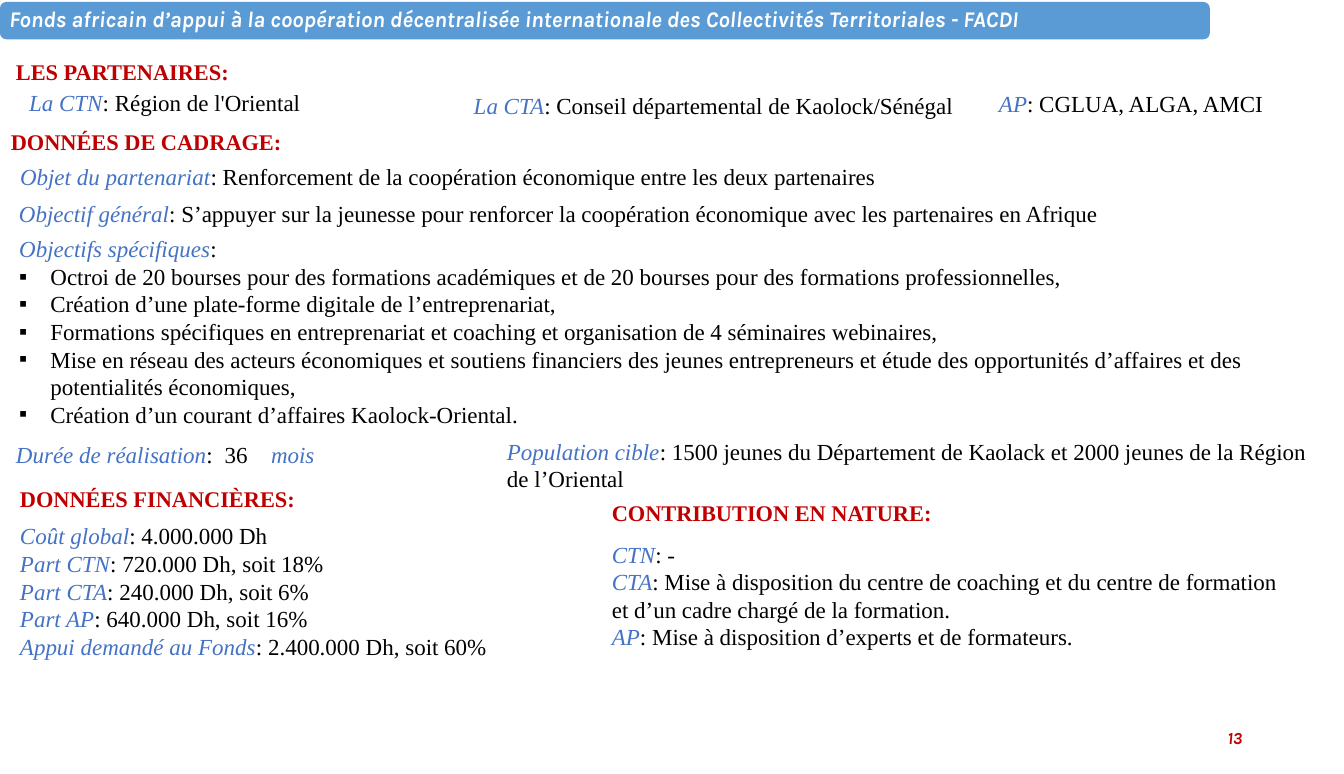
import pptx
import pptx.util
import pptx.dml.color
import pptx.enum.shapes
import pptx.enum.text
import pptx.oxml.ns
from lxml import etree

Inches = pptx.util.Inches
Pt = pptx.util.Pt
Align = pptx.enum.text.PP_ALIGN
Anchor = pptx.enum.text.MSO_ANCHOR
qn = pptx.oxml.ns.qn

HUES = {"band": "5B9BD5", "label": "4472C4", "head": "C00000",
        "text": "000000", "white": "FFFFFF"}
SERIF = "Times New Roman"
SANS = "Karla"
SIZE = 16.4


def hue(name):
    """Return the named colour."""
    return pptx.dml.color.RGBColor.from_string(HUES[name])


def place(shape, box):
    """Move a shape to a box of left, top, width and height in inches."""
    shape.left, shape.top, shape.width, shape.height = map(Inches, box)


def make_box(slide, box):
    """Add a wrapping text box and return its frame."""
    frame = slide.shapes.add_textbox(*map(Inches, box)).text_frame
    frame.word_wrap = True
    return frame


def style(para, name, size, color=None, bold=False, slant=False):
    """Set the font shared by the runs of a paragraph."""
    font = para.font
    font.name, font.size = name, Pt(size)
    font.bold, font.italic = bold, slant
    if color:
        font.color.rgb = hue(color)


def add_run(para, text, color, slant=False):
    """Add a run with its own colour and slant."""
    run = para.add_run()
    run.text = text
    run.font.color.rgb = hue(color)
    run.font.italic = slant


def add_pair(para, label, text):
    """Write a blue label followed by black text."""
    style(para, SERIF, SIZE)
    add_run(para, label, "label", True)
    add_run(para, ":" + text, "text")


def add_para(frame, index):
    """Return the first paragraph of a frame or add another."""
    return frame.paragraphs[0] if index == 0 else frame.add_paragraph()


def add_facts(slide, box, facts):
    """Fill a box with one labelled line per fact."""
    frame = make_box(slide, box)
    for index, (label, text) in enumerate(facts):
        add_pair(add_para(frame, index), label, " " + text)


def add_head(slide, box, text):
    """Add a red section heading."""
    para = make_box(slide, box).paragraphs[0]
    para.text = text
    style(para, SERIF, 16, "head", bold=True)


def set_mark(para, mark=None, inset=0):
    """Set the bullet and hanging indent of a paragraph."""
    props = para._p.get_or_add_pPr()
    props.set("marL", str(Inches(inset)))
    props.set("indent", str(-Inches(inset)))
    if mark:
        item = etree.Element(qn("a:buChar"), char=mark)
    else:
        item = etree.Element(qn("a:buNone"))
    font = props.find(qn("a:defRPr"))
    font.addprevious(item)


def add_banner(slide, box):
    """Draw the rounded band and set the title on it."""
    kind = pptx.enum.shapes.MSO_SHAPE.ROUNDED_RECTANGLE
    band = slide.shapes.add_shape(kind, *map(Inches, box))
    band.shadow.inherit = False
    band.fill.solid()
    band.fill.fore_color.rgb = hue("band")
    band.line.fill.background()
    title = slide.shapes.title
    title.element.addprevious(band.element)
    left, top, width, height = box
    place(title, (left + 0.02, top + 0.02, width - 0.03, height - 0.04))
    frame = title.text_frame
    frame.word_wrap = True
    frame.auto_size = pptx.enum.text.MSO_AUTO_SIZE.NONE
    frame.vertical_anchor = Anchor.MIDDLE
    frame.margin_left = frame.margin_right = Inches(0.07)
    frame.margin_top = frame.margin_bottom = Inches(0.07)
    para = frame.paragraphs[0]
    para.text = ("Fonds africain d’appui à la coopération décentralisée "
                 "internationale des Collectivités Territoriales - FACDI")
    para.alignment = Align.LEFT
    para.line_spacing = 0.9
    style(para, SANS, 16, "white", bold=True, slant=True)


def add_goals(slide, box):
    """Write the bulleted list of specific goals in the body."""
    body = slide.placeholders[1]
    place(body, box)
    frame = body.text_frame
    frame.auto_size = pptx.enum.text.MSO_AUTO_SIZE.NONE
    frame.vertical_anchor = Anchor.TOP
    goals = [
        "Octroi de 20 bourses pour des formations académiques et de "
        "20 bourses pour des formations professionnelles,",
        "Création d’une plate-forme digitale de l’entreprenariat,",
        "Formations spécifiques en entreprenariat et coaching et "
        "organisation de 4 séminaires webinaires,",
        "Mise en réseau des acteurs économiques et soutiens financiers des "
        "jeunes entrepreneurs et étude des opportunités d’affaires et des "
        "potentialités économiques,",
        "Création d’un courant d’affaires Kaolock-Oriental."]
    lead = frame.paragraphs[0]
    lead.space_before = Pt(0)
    add_pair(lead, "Objectifs spécifiques", "")
    set_mark(lead)
    for goal in goals:
        para = frame.add_paragraph()
        para.text = goal
        para.space_before = Pt(0)
        style(para, SERIF, SIZE, "text")
        set_mark(para, "▪", 0.31)


def add_term(slide, box):
    """Write the duration, spaced with tab stops."""
    para = make_box(slide, box).paragraphs[0]
    add_pair(para, "Durée de réalisation", "\t36\t")
    add_run(para, "mois", "label", True)
    stops = etree.Element(qn("a:tabLst"))
    for stop in (2.07, 2.53):
        etree.SubElement(stops, qn("a:tab"), pos=str(Inches(stop)), algn="l")
    para._p.pPr.find(qn("a:defRPr")).addprevious(stops)


def add_number(slide, box):
    """Write the page number at the lower right."""
    frame = make_box(slide, box)
    frame.vertical_anchor = Anchor.MIDDLE
    para = frame.paragraphs[0]
    para.text = "13"
    para.alignment = Align.RIGHT
    style(para, SANS, 12, "head", bold=True, slant=True)


def main():
    """Build the project sheet and save it."""
    deck = pptx.Presentation()
    deck.slide_width, deck.slide_height = Inches(13.33), Inches(7.68)
    slide = deck.slides.add_slide(deck.slide_layouts[1])
    add_banner(slide, (0, 0.02, 12, 0.37))
    for left, top, text in [(0.06, 0.53, "LES PARTENAIRES:"),
                            (0.01, 1.22, "DONNÉES DE CADRAGE:"),
                            (0.1, 4.76, "DONNÉES FINANCIÈRES:"),
                            (5.97, 4.9, "CONTRIBUTION EN NATURE:")]:
        add_head(slide, (left, top, 3.93, 0.37), text)
    for box, label, text in [
            ((0.19, 0.83, 4.66, 0.39), "La CTN", "Région de l'Oriental"),
            ((4.6, 0.86, 5.19, 0.39), "La CTA",
             "Conseil départemental de Kaolock/Sénégal"),
            ((9.81, 0.84, 3.5, 0.39), "AP", "CGLUA, ALGA, AMCI"),
            ((0.1, 1.56, 9.52, 0.39), "Objet du partenariat",
             "Renforcement de la coopération économique entre les deux "
             "partenaires"),
            ((0.09, 1.93, 13.2, 0.39), "Objectif général",
             "S’appuyer sur la jeunesse pour renforcer la coopération "
             "économique avec les partenaires en Afrique"),
            ((4.93, 4.29, 8.23, 0.65), "Population cible",
             "1500 jeunes du Département de Kaolack et 2000 jeunes de la "
             "Région de l’Oriental")]:
        add_facts(slide, box, [(label, text)])
    add_goals(slide, (0.09, 2.28, 13.24, 2.03))
    add_term(slide, (0.06, 4.32, 3.85, 0.39))
    add_facts(slide, (0.1, 5.13, 5.87, 1.51), [
        ("Coût global", "4.000.000 Dh"),
        ("Part CTN", "720.000 Dh, soit 18%"),
        ("Part CTA", "240.000 Dh, soit 6%"),
        ("Part AP", "640.000 Dh, soit 16%"),
        ("Appui demandé au Fonds", "2.400.000 Dh, soit 60%")])
    add_facts(slide, (5.97, 5.31, 6.96, 1.22), [
        ("CTN", "-"),
        ("CTA", "Mise à disposition du centre de coaching et du centre de "
                "formation et d’un cadre chargé de la formation."),
        ("AP", "Mise à disposition d’experts et de formateurs.")])
    add_number(slide, (9.42, 7.12, 3, 0.41))
    deck.save("out.pptx")


if __name__ == "__main__":
    main()
